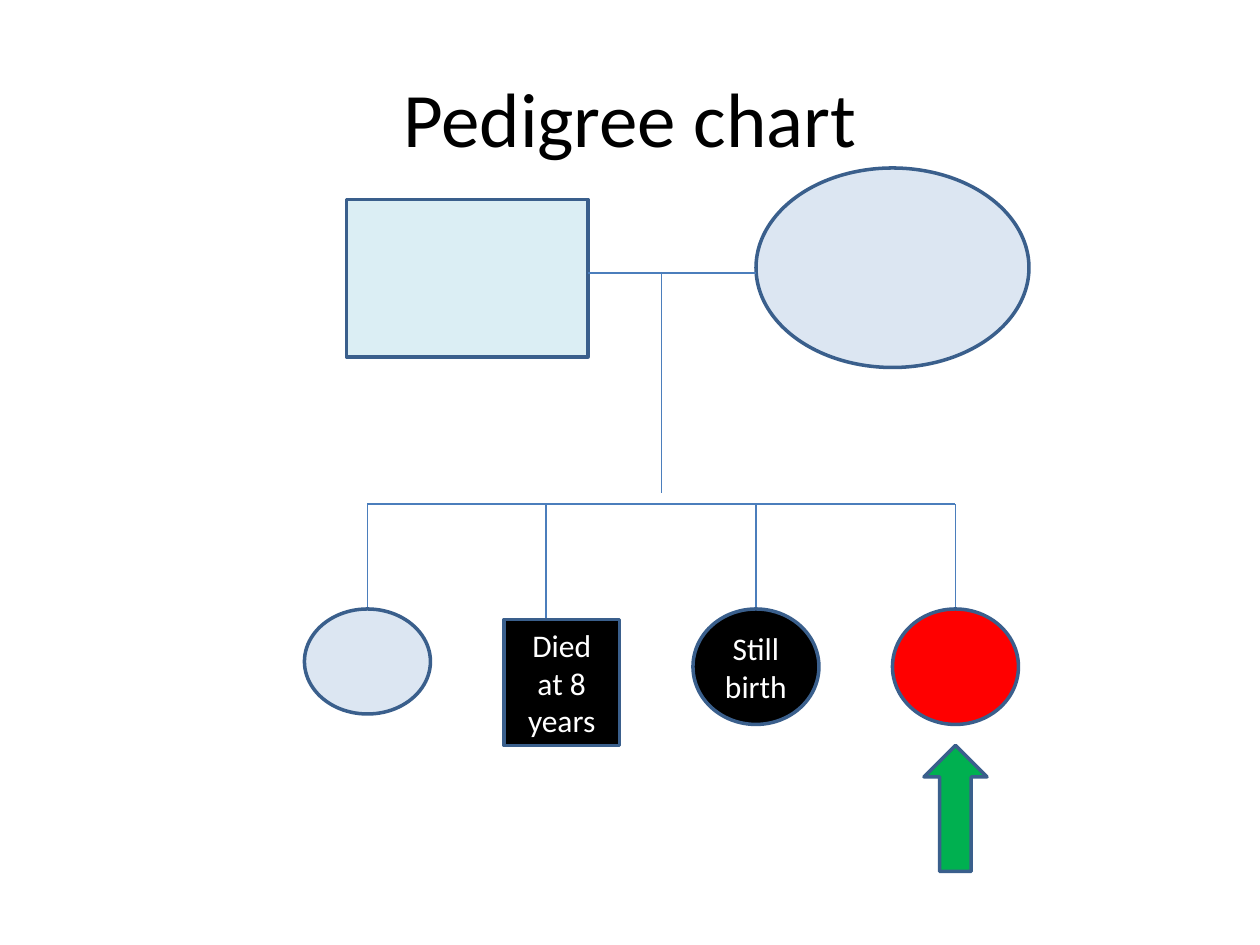
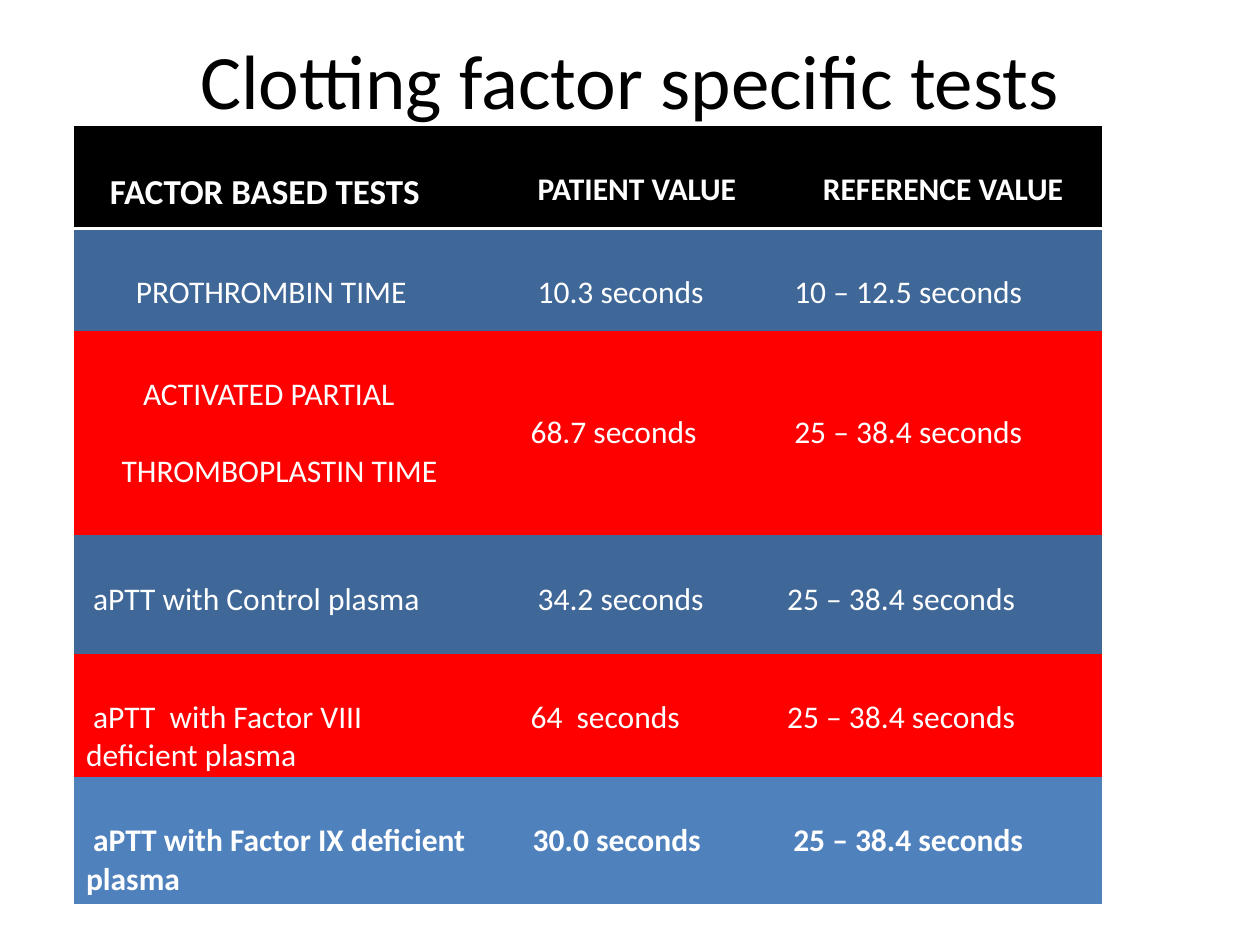
from lxml import etree
from pptx import Presentation
from pptx.dml.color import RGBColor
from pptx.enum.shapes import MSO_CONNECTOR, MSO_SHAPE
from pptx.enum.text import MSO_ANCHOR, PP_ALIGN
from pptx.oxml.ns import qn
from pptx.util import Pt

RECT, OVAL, UP_ARROW = MSO_SHAPE.RECTANGLE, MSO_SHAPE.OVAL, MSO_SHAPE.UP_ARROW
STRAIGHT = MSO_CONNECTOR.STRAIGHT
MIDDLE, CENTER, LEFT = MSO_ANCHOR.MIDDLE, PP_ALIGN.CENTER, PP_ALIGN.LEFT

BLACK, WHITE, RED, GREEN = "000000", "FFFFFF", "FF0000", "00B050"
PALE_TEAL, PALE_BLUE = "DBEEF4", "DCE6F2"
OUTLINE, LINK = "3A5F8C", "4B7EBC"
STEEL, BRIGHT_BLUE = "3F6797", "4F81BD"
PLAIN_TABLE = "{2D5ABB26-0587-4C30-8999-92F81FD0307C}"
LINE_HEIGHT = 22
CELL_PAD = 3.6


def rgb(code):
    """Turn a hex string into a colour."""
    return RGBColor.from_string(code)


def apply(target, values):
    """Set each named attribute on the target."""
    for name, value in values.items():
        setattr(target, name, value)


class Deck:
    """Hold the shared style and the current slide."""

    font = "Calibri"
    title_size = 44
    body_size = 18

    def __init__(self):
        """Start an empty 10 by 7.5 inch presentation."""
        self.deck = Presentation()
        apply(self.deck, {"slide_width": Pt(720), "slide_height": Pt(540)})
        self.slide = None

    def add_slide(self, title, top):
        """Open a blank slide and set its title."""
        self.slide = self.deck.slides.add_slide(self.deck.slide_layouts[6])
        box = self.slide.shapes.add_textbox(Pt(36), Pt(top), Pt(648), Pt(90))
        apply(box.text_frame, {"word_wrap": True, "vertical_anchor": MIDDLE})
        self.add_text(box.text_frame.paragraphs[0], title, BLACK, self.title_size)

    def add_text(self, paragraph, text, color, size=body_size, bold=False, align=CENTER):
        """Fill one paragraph with a styled run."""
        paragraph.alignment = align
        run = paragraph.add_run()
        run.text = text
        apply(run.font, {"name": self.font, "size": Pt(size), "bold": bold})
        run.font.color.rgb = rgb(color)

    def shape(self, kind, box, fill, text=""):
        """Draw an outlined shape, with a label if given."""
        shape = self.slide.shapes.add_shape(kind, *map(Pt, box))
        shape.shadow.inherit = False
        shape.fill.solid()
        shape.fill.fore_color.rgb = rgb(fill)
        shape.line.color.rgb = rgb(OUTLINE)
        shape.line.width = Pt(2)
        if text:
            apply(shape.text_frame, {"word_wrap": True, "vertical_anchor": MIDDLE})
            self.add_text(shape.text_frame.paragraphs[0], text, WHITE)

    def link(self, *ends):
        """Draw a thin line between two points."""
        line = self.slide.shapes.add_connector(STRAIGHT, *map(Pt, ends))
        line.line.color.rgb = rgb(LINK)
        line.line.width = Pt(0.75)
        etree.SubElement(line.element.spPr, qn("a:effectLst"))

    def table(self, left, top, widths, heights, rows, fills):
        """Draw a table whose cells are lists of (text, indent) lines."""
        frame = self.slide.shapes.add_table(
            len(rows), len(widths), Pt(left), Pt(top), Pt(sum(widths)), Pt(sum(heights)))
        table = frame.table
        apply(table, {"first_row": False, "horz_banding": False})
        for style in frame.element.iter(qn("a:tableStyleId")):
            style.text = PLAIN_TABLE
        for column, width in zip(table.columns, widths):
            column.width = Pt(width)
        for row, height, contents, fill in zip(table.rows, heights, rows, fills):
            row.height = Pt(height)
            tallest = max(map(len, contents))
            for cell, lines in zip(row.cells, contents):
                drop = LINE_HEIGHT * (1 + tallest - len(lines))
                self.cell(cell, lines, fill, drop)

    def cell(self, cell, lines, fill, drop):
        """Fill a table cell, with its text lowered by the drop."""
        apply(cell, {"margin_top": Pt(CELL_PAD + drop), "margin_bottom": Pt(CELL_PAD)})
        header = fill == BLACK
        if header:
            self.rule_below(cell)
        cell.fill.solid()
        cell.fill.fore_color.rgb = rgb(fill)
        frame = cell.text_frame
        bold = header or fill == BRIGHT_BLUE
        for index, (text, indent) in enumerate(lines):
            paragraph = frame.add_paragraph() if index else frame.paragraphs[0]
            if index:
                paragraph.space_before = Pt(LINE_HEIGHT)
            size = 20 if text.startswith("FACTOR") else self.body_size
            self.add_text(paragraph, text, WHITE, size, bold, LEFT)
            properties = paragraph._p.get_or_add_pPr()
            properties.set("marL", "0")
            properties.set("indent", str(Pt(indent)))

    def rule_below(self, cell):
        """Put a white border under a cell."""
        properties = cell._tc.get_or_add_tcPr()
        border = etree.SubElement(properties, qn("a:lnB"), w=str(Pt(2)))
        solid = etree.SubElement(border, qn("a:solidFill"))
        etree.SubElement(solid, qn("a:srgbClr"), val=WHITE)


def pedigree(deck):
    """Build the family tree."""
    deck.add_slide("Pedigree chart", 21.6)
    deck.shape(RECT, (198, 114, 138, 90), PALE_TEAL)
    deck.shape(OVAL, (432, 96, 156, 114), PALE_BLUE)
    couple_y, sibling_y = 156, 288
    drops = (210, 312, 432, 546)
    deck.link(336, couple_y, 432, couple_y)
    deck.link(378, couple_y, 378, 282)
    deck.link(drops[0], sibling_y, drops[-1], sibling_y)
    for x in drops:
        deck.link(x, sibling_y, x, 354)
    siblings = (
        (OVAL, (174, 348, 72, 60), PALE_BLUE, ""),
        (OVAL, (396, 348, 72, 66), BLACK, "Still birth"),
        (RECT, (288, 354, 66, 72), BLACK, "Died at 8 years"),
        (OVAL, (510, 348, 72, 66), RED, ""),
    )
    for sibling in siblings:
        deck.shape(*sibling)
    deck.shape(UP_ARROW, (528, 426, 36, 72), GREEN)


def clotting_tests(deck):
    """Build the table of factor tests."""
    deck.add_slide("Clotting factor specific tests", 0)
    normal = "25 – 38.4 seconds"
    tests = (
        ([("FACTOR BASED TESTS", 13.6)], [("PATIENT VALUE", 32.5)], [("REFERENCE VALUE", 28.5)]),
        ([("PROTHROMBIN TIME", 28.5)], [("10.3 seconds", 32.5)], [("10 – 12.5 seconds", 12.2)]),
        ([("ACTIVATED PARTIAL", 32.5), ("THROMBOPLASTIN TIME", 20.3)],
         [("68.7 seconds", 28.5)], [(normal, 12.2)]),
        ([("aPTT with Control plasma", 4)], [("34.2 seconds", 32.5)], [(normal, 8.1)]),
        ([("aPTT  with Factor VIII deficient plasma", 4)],
         [("64  seconds", 28.5)], [(normal, 8.1)]),
    )
    deck.table(42, 72, (225.5, 167, 195.5), (58.5, 58.5, 117, 67.5, 72),
               tests, (BLACK, STEEL, RED, STEEL, RED))
    factor_nine = ([("aPTT with Factor IX deficient plasma", 4)],
                   [("30.0 seconds", 16.2)], [(normal, 8.1)])
    deck.table(42, 444, (239, 157, 192), (72,), (factor_nine,), (BRIGHT_BLUE,))


def main():
    """Build and save both slides."""
    deck = Deck()
    pedigree(deck)
    clotting_tests(deck)
    deck.deck.save("out.pptx")


if __name__ == "__main__":
    main()
